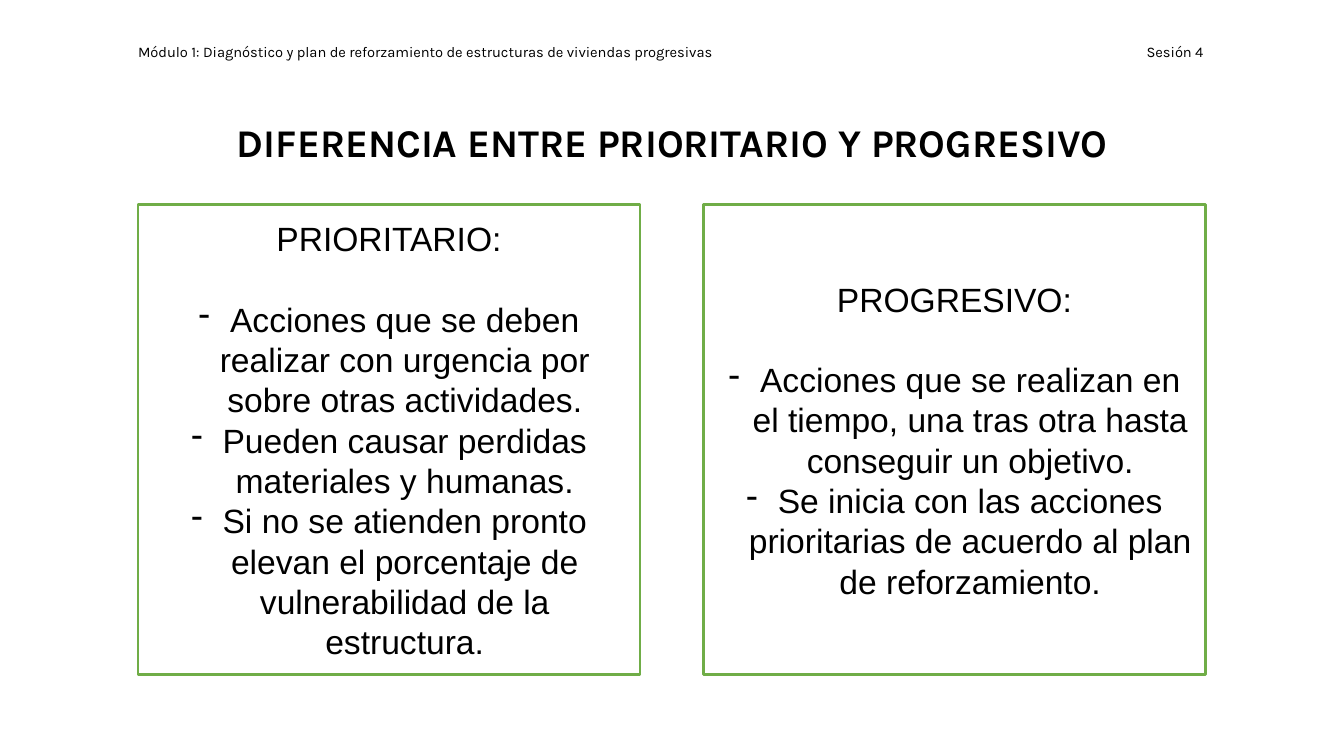
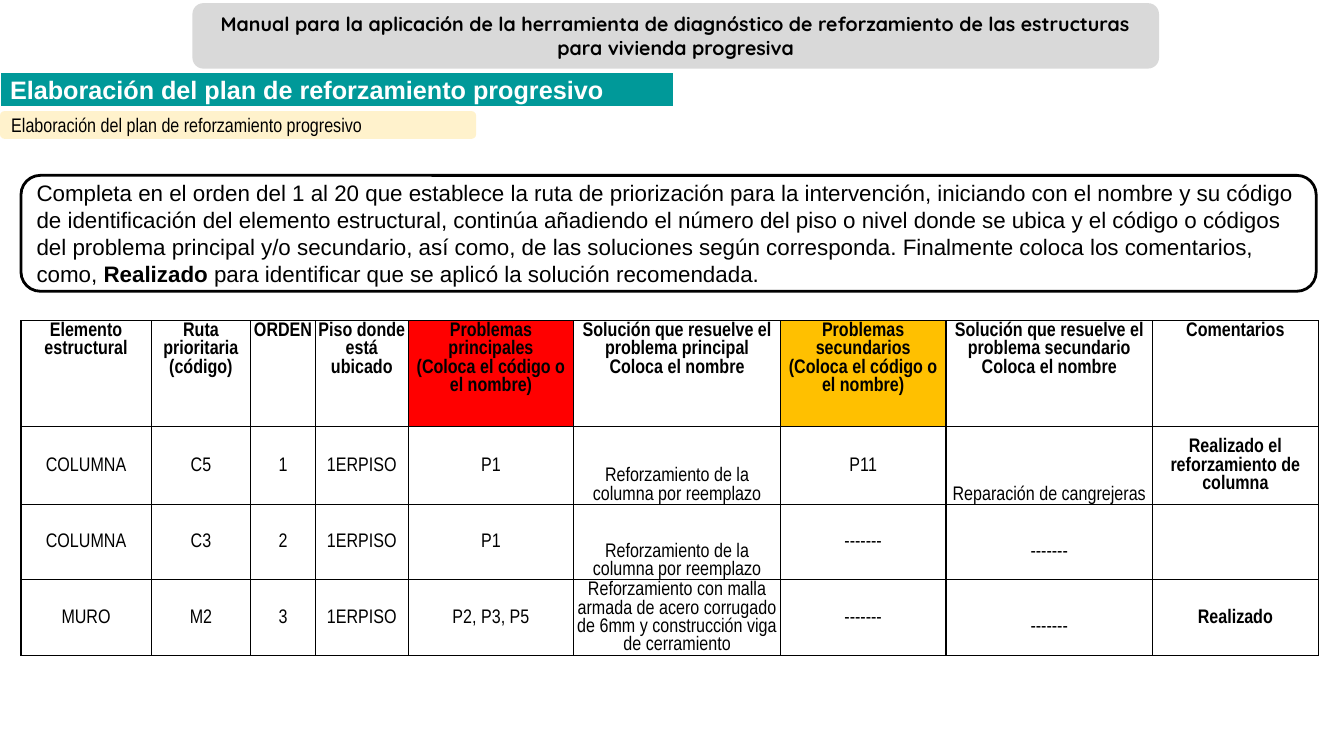
from dataclasses import dataclass

from pptx import Presentation
from pptx.dml.color import RGBColor
from pptx.enum.shapes import MSO_SHAPE
from pptx.enum.text import MSO_ANCHOR, MSO_AUTO_SIZE, PP_ALIGN
from pptx.oxml import parse_xml
from pptx.oxml.ns import nsdecls
from pptx.util import Cm, Pt


@dataclass(frozen=True)
class Theme:
    # Colours
    black: str = "000000"
    white: str = "FFFFFF"
    green: str = "70AD47"
    teal: str = "009999"
    grey: str = "D9D9D9"
    cream: str = "FFF2CC"
    red: str = "FF0000"
    amber: str = "FFC000"
    # Fonts
    heading_font: str = "Karla"
    banner_font: str = "Quicksand"
    body_font: str = "Arial"
    narrow_font: str = "Arial Narrow"
    # Type sizes
    running: float = 10.5
    small: int = 14
    body: int = 16
    band: int = 18
    panel: int = 24
    title: int = 28
    # Lines, in points
    outline: int = 2
    grid: int = 1


THEME = Theme()

# Grids, in cm
MARGIN, CONTENT_WIDTH, PANEL_GAP = 3.48, 26.9, 1.6
TABLE_LEFT = 0.53
COLUMN_WIDTHS = [3.28, 2.51, 1.63, 2.34, 4.17, 5.21, 4.17, 5.21, 4.17]
ROW_HEIGHTS = [2.67, 1.96, 1.9, 1.9]
SOLUTION_COLUMNS = (5, 7)
COMMENT_COLUMN = 8

PANELS = [
    ("PRIORITARIO:", [
        "Acciones que se deben realizar con urgencia por sobre otras actividades.",
        "Pueden causar perdidas materiales y humanas.",
        "Si no se atienden pronto elevan el porcentaje de vulnerabilidad de la estructura.",
    ]),
    ("PROGRESIVO:", [
        "Acciones que se realizan en el tiempo, una tras otra hasta conseguir un objetivo.",
        "Se inicia con las acciones prioritarias de acuerdo al plan de reforzamiento.",
    ]),
]

PLAN_TITLE = "Elaboración del plan de reforzamiento progresivo"
INSTRUCTIONS = [
    ("Completa en el orden del 1 al 20 que establece la ruta de priorización para la "
     "intervención, iniciando con el nombre y su código de identificación del elemento "
     "estructural, continúa añadiendo el número del piso o nivel donde se ubica y el código "
     "o códigos del problema principal y/o secundario, así como, de las soluciones según "
     "corresponda. Finalmente coloca los comentarios, como, ", False),
    ("Realizado", True),
    (" para identificar que se aplicó la solución recomendada.", False),
]

NO_PROBLEM = "-------"
PLAN_ROWS = [
    ["Elemento estructural", "Ruta prioritaria\n(código)", "ORDEN", "Piso donde está ubicado",
     "Problemas principales\n(Coloca el código o el nombre)",
     "Solución que resuelve el problema principal\nColoca el nombre",
     "Problemas secundarios\n(Coloca el código o el nombre)",
     "Solución que resuelve el problema secundario\nColoca el nombre", "Comentarios"],
    ["COLUMNA", "C5", "1", "1ERPISO", "P1", "Reforzamiento de la columna por reemplazo",
     "P11", "Reparación de cangrejeras", "Realizado el reforzamiento de columna"],
    ["COLUMNA", "C3", "2", "1ERPISO", "P1", "Reforzamiento de la columna por reemplazo",
     NO_PROBLEM, NO_PROBLEM, ""],
    ["MURO", "M2", "3", "1ERPISO", "P2, P3, P5",
     "Reforzamiento con malla armada de acero corrugado de 6mm y construcción viga de "
     "cerramiento", NO_PROBLEM, NO_PROBLEM, "Realizado"],
]
HEADER_FILLS = {4: THEME.red, 6: THEME.amber}


# Formatting
def set_all(target, values):
    for name, value in values.items():
        setattr(target, name, value)


def set_font(font, name, size, color=THEME.black, bold=False):
    set_all(font, {"name": name, "size": Pt(size), "bold": bold})
    font.color.rgb = RGBColor.from_string(color)


def place(shape, left, top, width, height):
    set_all(shape, {"left": Cm(left), "top": Cm(top), "width": Cm(width), "height": Cm(height)})


def paint(shape, fill=None, line=None):
    if fill:
        shape.fill.solid()
        shape.fill.fore_color.rgb = RGBColor.from_string(fill)
    else:
        shape.fill.background()
    if line:
        shape.line.color.rgb = RGBColor.from_string(line)
        shape.line.width = Pt(THEME.outline)
    else:
        shape.line.fill.background()


def write(box, text, align, **font):
    box.text_frame.text = text
    for para in box.text_frame.paragraphs:
        para.alignment = align
        set_font(para.font, **font)


def add_bullet(para):
    properties = para._p.get_or_add_pPr()
    properties.set("marL", str(Cm(0.79)))
    properties.set("indent", str(-Cm(0.79)))
    properties.append(parse_xml(
        f'<a:buClr {nsdecls("a")}><a:srgbClr val="{THEME.black}"/></a:buClr>'))
    properties.append(parse_xml(f'<a:buChar {nsdecls("a")} char="-"/>'))


# Elements
def add_slide(deck, title):
    page = deck.slides.add_slide(deck.slide_layouts[5])
    page.shapes.title.text_frame.text = title
    set_all(page.shapes.title.text_frame, {"word_wrap": True, "auto_size": MSO_AUTO_SIZE.NONE})
    return page


def add_box(page, kind, area, fill=None, line=None):
    box = page.shapes.add_shape(kind, 0, 0, 0, 0)
    place(box, *area)
    box.shadow.inherit = False
    paint(box, fill, line)
    set_all(box.text_frame, {"word_wrap": True, "vertical_anchor": MSO_ANCHOR.MIDDLE})
    return box


def add_running_header(page, module, session):
    box = page.shapes.add_textbox(0, 0, 0, 0)
    place(box, MARGIN, 0.89, CONTENT_WIDTH, 0.99)
    set_all(box.text_frame, {"word_wrap": True, "margin_left": 0, "margin_right": 0})
    para = box.text_frame.paragraphs[0]
    para.text = f"{module}\t{session}"
    para.line_spacing = 1.15
    para._p.get_or_add_pPr().append(parse_xml(
        f'<a:tabLst {nsdecls("a")}><a:tab pos="{Cm(CONTENT_WIDTH - 0.05)}" algn="r"/></a:tabLst>'))
    set_font(para.font, THEME.heading_font, THEME.running)


def add_panel(page, area, heading, points):
    panel = add_box(page, MSO_SHAPE.RECTANGLE, area, THEME.white, THEME.green)
    frame = panel.text_frame
    frame.text = "\n".join([heading, *points])
    for index, para in enumerate(frame.paragraphs):
        para.alignment = PP_ALIGN.CENTER
        if index:
            add_bullet(para)
        else:
            para.space_after = Pt(1.2 * THEME.panel)
        set_font(para.font, THEME.body_font, THEME.panel)


def add_instructions(page, area, spans):
    box = add_box(page, MSO_SHAPE.ROUNDED_RECTANGLE, area, line=THEME.black)
    para = box.text_frame.paragraphs[0]
    para.alignment = PP_ALIGN.LEFT
    for text, bold in spans:
        span = para.add_run()
        span.text = text
        set_font(span.font, THEME.body_font, THEME.body, bold=bold)


def add_borders(cell):
    properties = cell._tc.get_or_add_tcPr()
    for side in ("lnL", "lnR", "lnT", "lnB"):
        properties.append(parse_xml(
            f'<a:{side} {nsdecls("a")} w="{Pt(THEME.grid)}"><a:solidFill>'
            f'<a:srgbClr val="{THEME.black}"/></a:solidFill></a:{side}>'))


def fill_cell(cell, text, row, column):
    header = row == 0
    solution = column in SOLUTION_COLUMNS
    anchor = MSO_ANCHOR.BOTTOM if solution else MSO_ANCHOR.MIDDLE
    raised = solution and text == NO_PROBLEM
    set_all(cell, {
        "margin_left": Cm(0.03), "margin_right": Cm(0.03), "margin_top": Cm(0.03),
        "margin_bottom": Cm(0.46 if raised else 0),
        "vertical_anchor": MSO_ANCHOR.TOP if header else anchor,
    })
    write(cell, text, PP_ALIGN.CENTER, name=THEME.narrow_font, size=THEME.small,
          bold=header or column == COMMENT_COLUMN)
    add_borders(cell)
    if header and column in HEADER_FILLS:
        cell.fill.solid()
        cell.fill.fore_color.rgb = RGBColor.from_string(HEADER_FILLS[column])
    else:
        cell.fill.background()


def add_plan_table(page):
    table = page.shapes.add_table(
        len(ROW_HEIGHTS), len(COLUMN_WIDTHS), Cm(TABLE_LEFT), Cm(8.08),
        Cm(sum(COLUMN_WIDTHS)), Cm(sum(ROW_HEIGHTS))).table
    set_all(table, {"first_row": False, "horz_banding": False})
    for column, width in zip(table.columns, COLUMN_WIDTHS):
        column.width = Cm(width)
    for row, height in zip(table.rows, ROW_HEIGHTS):
        row.height = Cm(height)
    for row, texts in enumerate(PLAN_ROWS):
        for column, text in enumerate(texts):
            fill_cell(table.cell(row, column), text, row, column)


# Slides
def build_comparison(deck):
    page = add_slide(deck, "DIFERENCIA ENTRE PRIORITARIO Y PROGRESIVO")
    add_running_header(
        page, "Módulo 1: Diagnóstico y plan de reforzamiento de estructuras de viviendas "
        "progresivas", "Sesión 4")
    title = page.shapes.title
    place(title, MARGIN, 2.77, CONTENT_WIDTH, 1.47)
    title.text_frame.vertical_anchor = MSO_ANCHOR.TOP
    para = title.text_frame.paragraphs[0]
    set_all(para, {"alignment": PP_ALIGN.CENTER, "line_spacing": 1.07})
    set_font(para.font, THEME.heading_font, THEME.title, bold=True)
    width = (CONTENT_WIDTH - PANEL_GAP) / 2
    for index, (heading, points) in enumerate(PANELS):
        left = MARGIN + index * (width + PANEL_GAP)
        add_panel(page, (left, 5.16, width, 11.84), heading, points)


def build_plan(deck):
    page = add_slide(deck, PLAN_TITLE)
    rounded = MSO_SHAPE.ROUNDED_RECTANGLE
    banner = add_box(page, rounded, (4.85, 0.08, 24.36, 1.65), THEME.grey)
    write(banner, "Manual para la aplicación de la herramienta de diagnóstico de reforzamiento "
          "de las estructuras para vivienda progresiva", PP_ALIGN.CENTER,
          name=THEME.banner_font, size=THEME.small, bold=True)
    # Title as a rounded band
    title = page.shapes.title
    place(title, 0, 1.8, 17, 0.9)
    title.element.spPr.find("{*}xfrm").addnext(parse_xml(
        f'<a:prstGeom {nsdecls("a")} prst="roundRect"><a:avLst/></a:prstGeom>'))
    paint(title, THEME.teal, THEME.white)
    title.text_frame.vertical_anchor = MSO_ANCHOR.MIDDLE
    write(title, PLAN_TITLE, PP_ALIGN.LEFT, name=THEME.body_font, size=THEME.band,
          color=THEME.white, bold=True)
    subtitle = add_box(page, rounded, (0, 2.8, 12, 0.7), THEME.cream)
    write(subtitle, PLAN_TITLE, PP_ALIGN.LEFT, name=THEME.narrow_font, size=THEME.small)
    add_instructions(page, (TABLE_LEFT, 4.42, 32.64, 2.92), INSTRUCTIONS)
    add_plan_table(page)


def main():
    deck = Presentation()
    set_all(deck, {"slide_width": Cm(33.87), "slide_height": Cm(19.05)})
    build_comparison(deck)
    build_plan(deck)
    deck.save("out.pptx")


if __name__ == "__main__":
    main()
